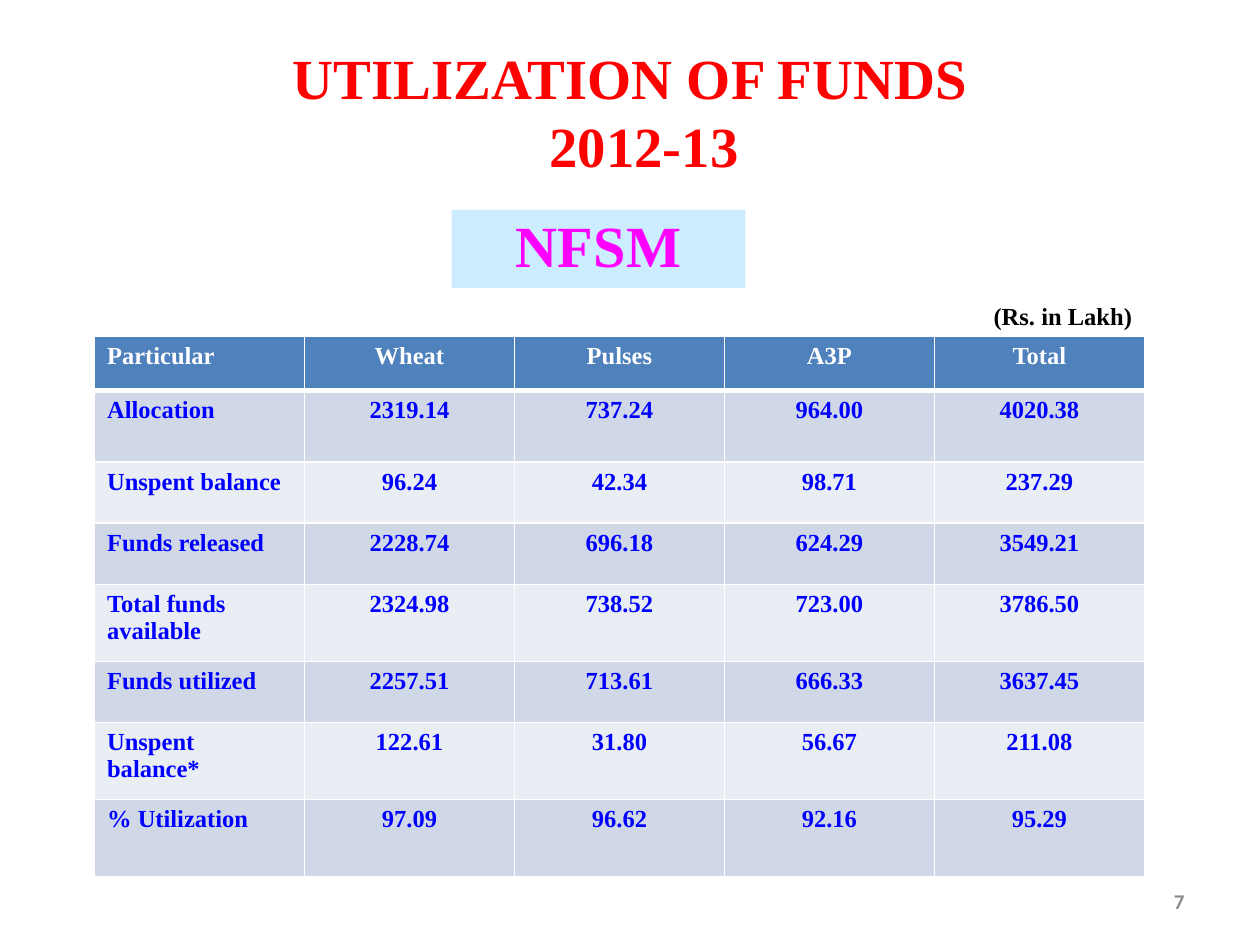
from dataclasses import dataclass

from lxml.etree import SubElement
from pptx import Presentation
from pptx.dml.color import RGBColor
from pptx.enum.shapes import MSO_SHAPE
from pptx.enum.text import MSO_ANCHOR, PP_ALIGN
from pptx.oxml.ns import qn
from pptx.util import Pt

COLORS = {
    "title": "FF0000", "badge": "CCECFF", "badge_text": "FF00FF",
    "unit": "000000", "page": "8C8C8C", "header": "4F81BD",
    "white": "FFFFFF", "figures": "0000FF",
    "band_dark": "D0D8E8", "band_light": "E9EDF4",
}
SERIF = "Times New Roman"


@dataclass
class TextStyle:
    size: float
    color: str
    font: str = SERIF
    align: PP_ALIGN = PP_ALIGN.CENTER


@dataclass
class Box:
    left: float
    top: float
    width: float
    height: float

    def lengths(self) -> list:
        return [Pt(v) for v in (self.left, self.top, self.width, self.height)]


def rgb(name: str) -> RGBColor:
    return RGBColor.from_string(COLORS[name])


def write(frame, lines: list[str], style: TextStyle) -> None:
    """Fill a text frame with one bold paragraph per line."""
    frame.word_wrap = True
    for index, line in enumerate(lines):
        paragraph = frame.add_paragraph() if index else frame.paragraphs[0]
        paragraph.alignment = style.align
        run = paragraph.add_run()
        run.text = line
        formats = {"size": Pt(style.size), "name": style.font, "bold": True}
        for attribute, value in formats.items():
            setattr(run.font, attribute, value)
        run.font.color.rgb = rgb(style.color)


def add_text(slide, box: Box, lines: list[str], style: TextStyle):
    frame = slide.shapes.add_textbox(*box.lengths()).text_frame
    frame.vertical_anchor = MSO_ANCHOR.MIDDLE
    write(frame, lines, style)
    return frame


def set_borders(cell, widths: dict[str, float]) -> None:
    """Draw white cell borders; they must come before the fill in the XML."""
    properties = cell._tc.get_or_add_tcPr()
    for side, width in widths.items():
        line = SubElement(properties, qn(f"a:{side}"), w=str(Pt(width)))
        fill = SubElement(line, qn("a:solidFill"))
        SubElement(fill, qn("a:srgbClr"), val=COLORS["white"])


def add_funds_table(slide, box: Box, rows: list[list[str]], heights: list[float]) -> None:
    table = slide.shapes.add_table(len(rows), len(rows[0]), *box.lengths()).table
    for column in table.columns:
        column.width = Pt(box.width / len(rows[0]))
    for r, (values, height) in enumerate(zip(rows, heights)):
        table.rows[r].height = Pt(height)
        band = "header" if r == 0 else "band_dark" if r % 2 else "band_light"
        for c, value in enumerate(values):
            cell = table.cell(r, c)
            set_borders(cell, {"lnL": 1, "lnR": 1,
                               "lnT": 3 if r == 1 else 1,
                               "lnB": 3 if r == 0 else 1})
            cell.fill.solid()
            cell.fill.fore_color.rgb = rgb(band)
            write(cell.text_frame, [value], TextStyle(
                14, "figures" if r else "white",
                align=PP_ALIGN.CENTER if c else PP_ALIGN.LEFT))


FUNDS = [
    ["Particular", "Wheat", "Pulses", "A3P", "Total"],
    ["Allocation", "2319.14", "737.24", "964.00", "4020.38"],
    ["Unspent balance", "96.24", "42.34", "98.71", "237.29"],
    ["Funds released", "2228.74", "696.18", "624.29", "3549.21"],
    ["Total funds available", "2324.98", "738.52", "723.00", "3786.50"],
    ["Funds utilized", "2257.51", "713.61", "666.33", "3637.45"],
    ["Unspent balance*", "122.61", "31.80", "56.67", "211.08"],
    ["% Utilization", "97.09", "96.62", "92.16", "95.29"],
]
ROW_HEIGHTS = [31, 41, 35, 35, 44, 35, 44, 44]


def main() -> None:
    presentation = Presentation()
    presentation.slide_width, presentation.slide_height = Pt(720), Pt(540)
    slide = presentation.slides.add_slide(presentation.slide_layouts[6])

    # Title, with the year set slightly to the right
    title = add_text(slide, Box(36, 21.6, 648, 90),
                     ["UTILIZATION OF FUNDS", "2012-13"], TextStyle(32.4, "title"))
    title.margin_bottom = Pt(10)
    for paragraph in title.paragraphs:
        paragraph.line_spacing = Pt(38.9)
    year = title.paragraphs[1]
    year._p.get_or_add_pPr().set("marL", str(Pt(16)))

    # Unit of the amounts and page number
    add_text(slide, Box(54, 169, 600, 23), ["(Rs. in Lakh)"],
             TextStyle(14, "unit", align=PP_ALIGN.RIGHT))
    add_text(slide, Box(516, 500.5, 168, 28.8), ["7"],
             TextStyle(12, "page", "Calibri", PP_ALIGN.RIGHT))

    # Funds by crop
    add_funds_table(slide, Box(54, 192, 600, sum(ROW_HEIGHTS)), FUNDS, ROW_HEIGHTS)

    # Programme badge
    badge = slide.shapes.add_shape(MSO_SHAPE.RECTANGLE, *Box(258, 120, 168, 44.6).lengths())
    badge.shadow.inherit = False
    badge.fill.solid()
    badge.fill.fore_color.rgb = rgb("badge")
    badge.line.fill.background()
    badge.text_frame.vertical_anchor = MSO_ANCHOR.MIDDLE
    write(badge.text_frame, ["NFSM"], TextStyle(33.3, "badge_text"))
    badge.text_frame.paragraphs[0].line_spacing = 0.9

    presentation.save("out.pptx")


if __name__ == "__main__":
    main()
